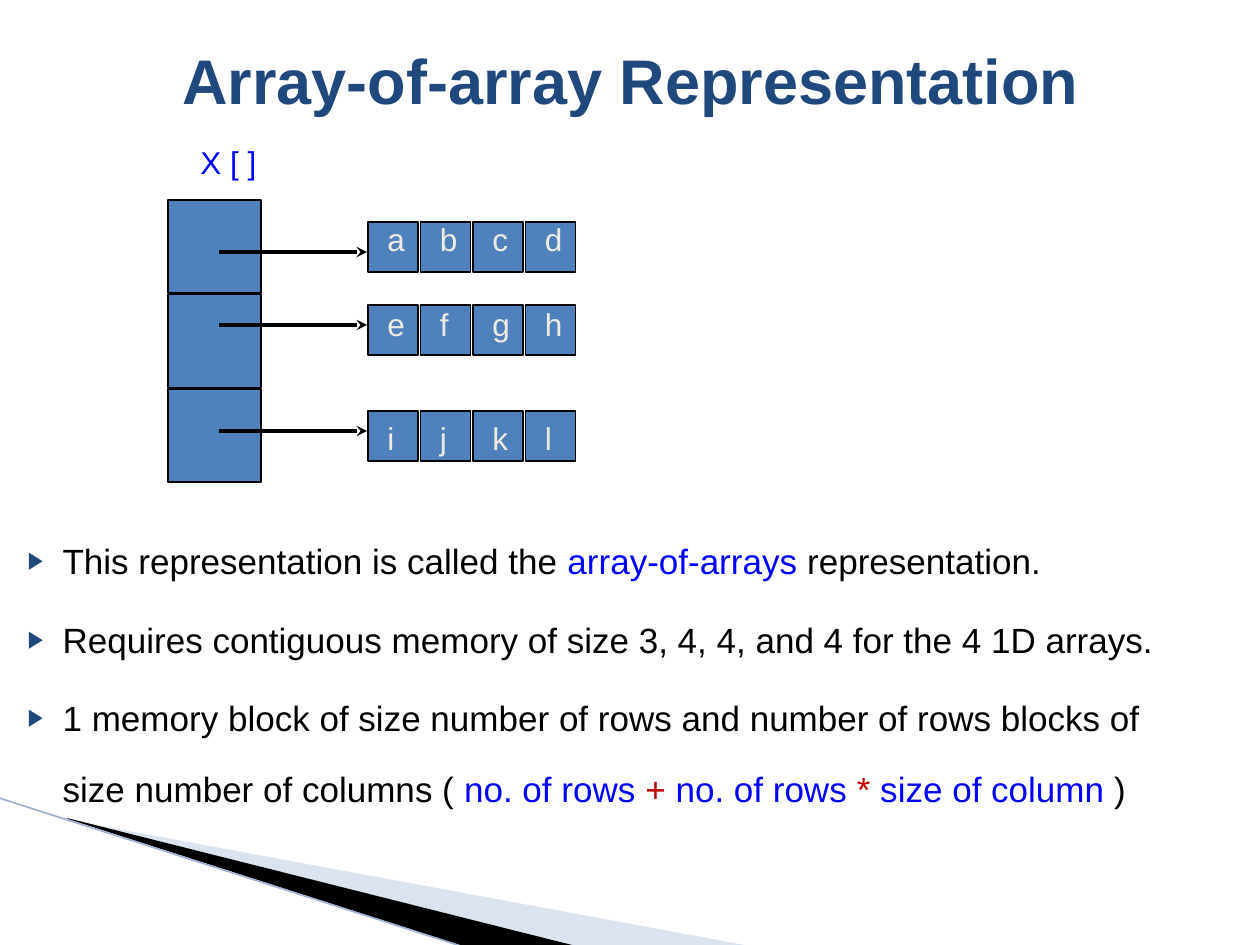
from pptx import Presentation
from pptx.dml.color import RGBColor
from pptx.enum.shapes import MSO_CONNECTOR as Link, MSO_SHAPE as Shape
from pptx.enum.text import MSO_ANCHOR as Anchor, MSO_AUTO_SIZE as Fit, PP_ALIGN as Align
from pptx.oxml.ns import qn
from pptx.util import Emu, Pt
from lxml.etree import SubElement

NAVY = RGBColor(0x1F, 0x49, 0x7D)
BLUE = RGBColor(0x00, 0x00, 0xFF)
STEEL = RGBColor(0x4F, 0x81, 0xBD)
PALE = RGBColor(0xA7, 0xB9, 0xDB)
MIST = RGBColor(0x9E, 0xB3, 0xD6)
CREAM = RGBColor(0xEE, 0xEC, 0xE1)
RED = RGBColor(0xC0, 0x00, 0x00)
BLACK = RGBColor(0, 0, 0)

TITLE = "Array-of-array Representation"
NAME = "X [ ]"
# letters, top of cells, top of letters, height of arrow
ROWS = [
    ("abcd", 222, 214, 252),
    ("efgh", 305, 299, 325),
    ("ijkl", 411, 413, 431),
]
POINTS = [
    [("This representation is called the ", BLACK), ("array-of-arrays", BLUE),
     (" representation.", BLACK)],
    [("Requires contiguous memory of size 3, 4, 4, and 4 for the 4 1D arrays.", BLACK)],
    [("1 memory block of size number of rows and number of rows blocks of "
      "size number of columns ( ", BLACK),
     ("no. of rows ", BLUE), ("+", RED), (" no. of rows ", BLUE), ("*", RED),
     (" size of column ", BLUE), (")", BLACK)],
]
# outline, fill, opacity in percent
WEDGES = [
    ([(69, 820), (750, 946), (575, 946), (69, 819)], PALE, 40),
    ([(67, 818), (576, 946), (469, 948), (68, 819)], BLACK, 100),
]
LEFT, STEP, CELL = 368, 52.5, 50
HEAD_TOP, HEAD_STEP, HEAD = 200, 94.5, 93


def px(n):
    return Emu(round(n * 914400 / 126))


def place(shape, *box):
    shape.left, shape.top, shape.width, shape.height = map(px, box)


def write(para, text, size=18, color=BLACK, bold=False):
    run = para.add_run()
    run.text = text
    font = run.font
    font.name, font.size, font.bold = "Arial", Pt(size), bold
    font.color.rgb = color


def label(text, *box, **style):
    frame = slide.shapes.add_textbox(*map(px, box)).text_frame
    frame.word_wrap = True
    write(frame.paragraphs[0], text, **style)


def square(x, y, size):
    box = slide.shapes.add_shape(Shape.RECTANGLE, *map(px, (x, y, size, size)))
    box.shadow.inherit = False
    box.fill.solid()
    box.fill.fore_color.rgb = STEEL
    box.line.color.rgb = BLACK
    box.line.width = Pt(1)


def line(x1, y1, x2, y2, color, width, arrow=False):
    link = slide.shapes.add_connector(Link.STRAIGHT, *map(px, (x1, y1, x2, y2)))
    link.line.color.rgb = color
    link.line.width = Pt(width)
    if arrow:
        SubElement(link.line._get_or_add_ln(), qn("a:tailEnd"), type="stealth")
    SubElement(link._element.spPr, qn("a:effectLst"))


def wedge(points, color, alpha):
    start, *rest = [(px(x), px(y)) for x, y in points]
    path = slide.shapes.build_freeform(*start)
    path.add_line_segments(rest)
    shape = path.convert_to_shape()
    shape.shadow.inherit = False
    shape.line.fill.background()
    shape.fill.solid()
    shape.fill.fore_color.rgb = color
    if alpha < 100:
        tint = shape._element.spPr.find(".//" + qn("a:srgbClr"))
        SubElement(tint, qn("a:alpha"), val=str(alpha * 1000))


def bullet(para):
    props = para._p.get_or_add_pPr()
    props.set("marL", str(px(50)))
    props.set("indent", str(px(-35)))
    SubElement(SubElement(props, qn("a:buClr")), qn("a:srgbClr"), val=str(NAVY))
    SubElement(props, qn("a:buSzPct"), val="68000")
    SubElement(props, qn("a:buFont"), typeface="Arial")
    SubElement(props, qn("a:buChar"), char="▶")


deck = Presentation()
deck.slide_width, deck.slide_height = px(1260), px(945)
slide = deck.slides.add_slide(deck.slide_layouts[1])
title, body = slide.placeholders

for item in WEDGES:
    wedge(*item)
line(-1, 798, 467, 948, MIST, 0.95)

# Text goes in front of the corner wedges
for holder in (body, title):
    slide.shapes._spTree.append(holder._element)

place(title, 32, 0, 1197, 158)
title.text_frame.vertical_anchor = Anchor.MIDDLE
head = title.text_frame.paragraphs[0]
head.alignment = Align.CENTER
write(head, TITLE, size=36, color=NAVY, bold=True)

place(body, 0, 504, 1218, 357)
frame = body.text_frame
frame.auto_size = Fit.NONE
for i, runs in enumerate(POINTS):
    para = frame.add_paragraph() if i else frame.paragraphs[0]
    bullet(para)
    para.line_spacing = 1.7
    para.space_before = Pt(4 if i else 0)
    for text, color in runs:
        write(para, text, size=20, color=color)

for i, (letters, top, text_top, mid) in enumerate(ROWS):
    square(168, HEAD_TOP + i * HEAD_STEP, HEAD)
    for j, letter in enumerate(letters):
        x = LEFT + j * STEP
        square(x, top, CELL)
        label(letter, x + 7, text_top, 43, 54, color=CREAM)
    line(219, mid, 367, mid, BLACK, 2, arrow=True)
label(NAME, 188, 137, 105, 50, color=BLUE)

deck.save("out.pptx")
